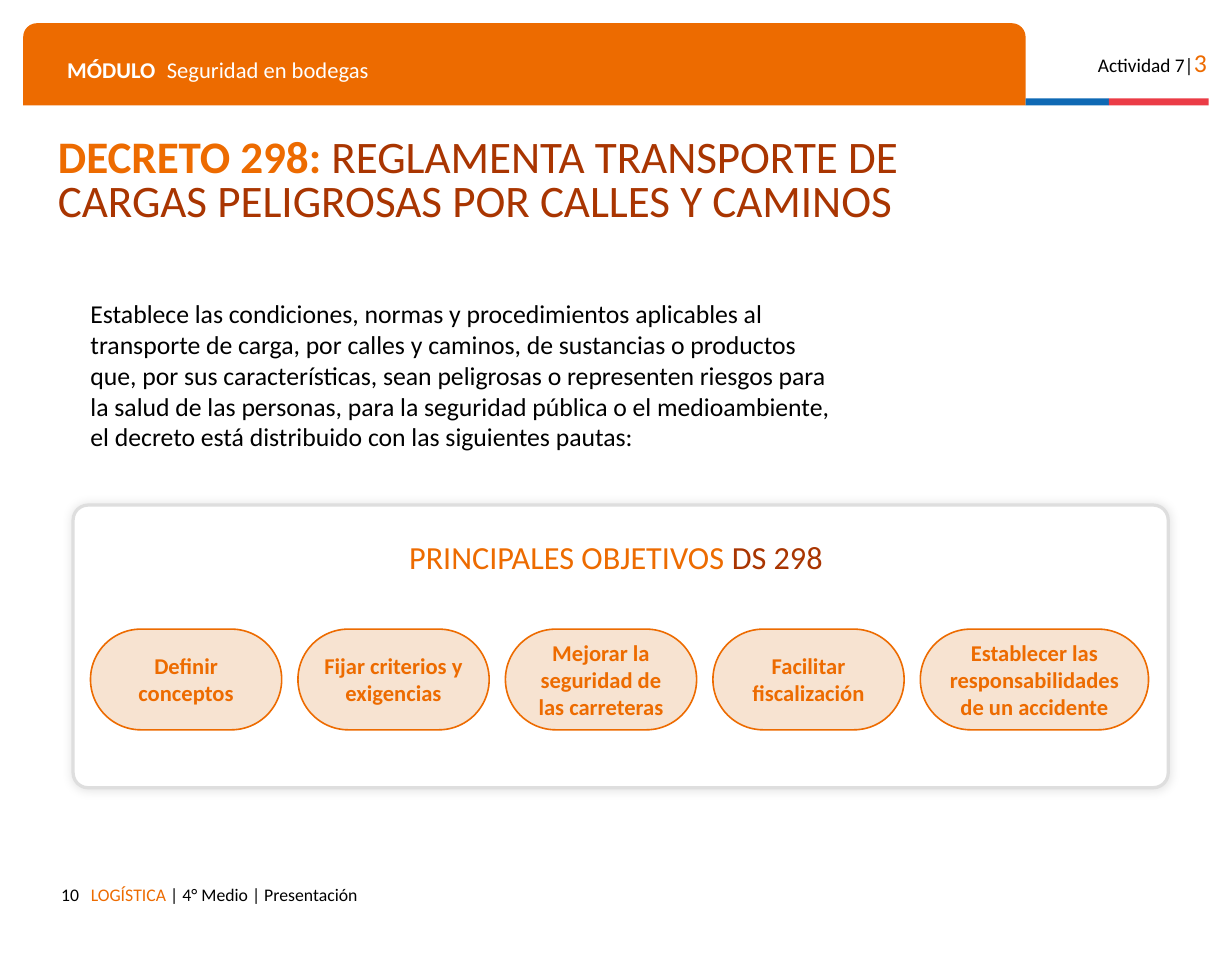
from pptx import Presentation
from pptx.dml.color import RGBColor
from pptx.enum import shapes, text
from pptx.oxml import parse_xml
from pptx.oxml.ns import nsdecls
from pptx.util import Pt

COLORS = {
    "orange": "ED6B00", "rust": "A93501", "blue": "0F69B4", "red": "EB3C46",
    "peach": "F7E3D1", "gray": "DEDEDE", "white": "FFFFFF", "black": "000000",
}
FONT = "Calibri"
SHAPE = shapes.MSO_SHAPE
LEFT, CENTER, RIGHT = text.PP_ALIGN.LEFT, text.PP_ALIGN.CENTER, text.PP_ALIGN.RIGHT
TOP, MIDDLE = text.MSO_ANCHOR.TOP, text.MSO_ANCHOR.MIDDLE
GOALS = [
    ("Definir conceptos", 118.8),
    ("Fijar criterios y exigencias", 118.8),
    ("Mejorar la seguridad de las carreteras", 118.8),
    ("Facilitar fiscalización", 118.8),
    ("Establecer las responsabilidades de un accidente", 141.8),
]


def color(name):
    return RGBColor.from_string(COLORS[name])


def write(box, spans, align=LEFT, anchor=TOP, inset=7.2, spacing=1.0, xml=()):
    """Fill a box with one paragraph of (words, size, color, bold) spans."""
    frame = box.text_frame
    frame.word_wrap = True
    frame.auto_size = text.MSO_AUTO_SIZE.NONE
    frame.vertical_anchor = anchor
    frame.margin_left = frame.margin_right = Pt(7.2)
    frame.margin_top = frame.margin_bottom = Pt(inset)
    para = frame.paragraphs[0]
    para.alignment = align
    para.line_spacing = spacing
    para.space_before = Pt(0)
    for element in xml:
        para._p.get_or_add_pPr().append(parse_xml(element))
    for words, size, ink, bold in spans:
        span = para.add_run()
        span.text = words
        span.font.name = FONT
        span.font.size = Pt(size)
        span.font.bold = bold
        span.font.color.rgb = color(ink)


def add_label(page, place, spans, **options):
    box = page.shapes.add_textbox(*map(Pt, place))
    write(box, spans, **options)


def fill_placeholder(box, place, spans, **options):
    box.left, box.top, box.width, box.height = map(Pt, place)
    write(box, spans, **options)


def add_block(page, kind, place, fill, line=None, line_width=1, corners=()):
    block = page.shapes.add_shape(kind, *map(Pt, place))
    block.shadow.inherit = False
    block.fill.solid()
    block.fill.fore_color.rgb = color(fill)
    if line:
        block.line.color.rgb = color(line)
        block.line.width = Pt(line_width)
    else:
        block.line.fill.background()
    for index, corner in enumerate(corners):
        block.adjustments[index] = corner
    return block


def add_soft_shadow(block, blur, opacity):
    effects = block._element.spPr.find(
        "{http://schemas.openxmlformats.org/drawingml/2006/main}effectLst")
    effects.append(parse_xml(
        f'<a:outerShdw {nsdecls("a")} blurRad="{Pt(blur)}" dist="0" dir="0" '
        f'algn="ctr" rotWithShape="0"><a:srgbClr val="{COLORS["black"]}">'
        f'<a:alpha val="{opacity * 1000}"/></a:srgbClr></a:outerShdw>'))


def add_header(page):
    add_block(page, SHAPE.ROUND_2_SAME_RECTANGLE, (14.4, 14.4, 622.8, 51.1),
              "orange", corners=(0.167, 0))
    add_block(page, SHAPE.RECTANGLE, (637.2, 61.2, 51.8, 4.3), "blue")
    add_block(page, SHAPE.RECTANGLE, (689, 61.2, 61.9, 4.3), "red")
    tab = f'<a:tabLst {nsdecls("a")}><a:tab pos="{Pt(62)}" algn="l"/></a:tabLst>'
    add_label(page, (34.6, 27.4, 586, 25.2),
              [("MÓDULO\t", 14, "white", True),
               ("Seguridad en bodegas", 14, "white", False)], xml=[tab])
    add_label(page, (664.6, 21.6, 92.2, 27.4),
              [("Actividad 7|", 12, "black", False), ("3", 16, "orange", False)],
              align=RIGHT)


def add_goals(page):
    panel = add_block(page, SHAPE.ROUNDED_RECTANGLE, (45.4, 313.9, 680.4, 175.7),
                      "white", "gray", 2, corners=(0.053,))
    add_soft_shadow(panel, blur=6, opacity=11)
    add_label(page, (226.8, 331.2, 311.8, 32.4),
              [("PRINCIPALES OBJETIVOS ", 20, "orange", False),
               ("DS 298", 20, "rust", False)],
              align=CENTER, anchor=MIDDLE, spacing=0.9)
    left, gap = 56.2, 10.1
    for goal, width in GOALS:
        pill = add_block(page, SHAPE.ROUNDED_RECTANGLE, (left, 391, width, 62.6),
                         "peach", "orange", corners=(0.5,))
        write(pill, [(goal, 14, "orange", True)], align=CENTER, anchor=MIDDLE, inset=3.6)
        left += width + gap


def add_footer(page):
    add_label(page, (14.4, 542.2, 41.8, 20.9), [("10", 11, "black", False)], align=RIGHT)
    add_label(page, (49.3, 542.2, 514, 27.4),
              [("LOGÍSTICA ", 11, "orange", False),
               ("| 4° Medio | Presentación", 11, "black", False)])


def main():
    deck = Presentation()
    deck.slide_width, deck.slide_height = Pt(765.4), Pt(595.4)
    page = deck.slides.add_slide(deck.slide_layouts[1])
    title, body = page.placeholders

    add_header(page)

    # Title and introduction
    fill_placeholder(title, (28.8, 100.8, 593.3, 25.2),
                     [("DECRETO 298: ", 28, "orange", True),
                      ("REGLAMENTA TRANSPORTE DE CARGAS PELIGROSAS POR CALLES Y CAMINOS",
                       28, "rust", False)],
                     anchor=MIDDLE, spacing=0.8)
    fill_placeholder(body, (49, 181.4, 482.4, 116.6),
                     [("Establece las condiciones, normas y procedimientos aplicables al "
                       "transporte de carga, por calles y caminos, de sustancias o productos "
                       "que, por sus características, sean peligrosas o representen riesgos "
                       "para la salud de las personas, para la seguridad pública o el "
                       "medioambiente, el decreto está distribuido con las siguientes pautas:",
                       16, "black", False)],
                     inset=3.6, xml=[f'<a:buNone {nsdecls("a")}/>'])
    properties = body.text_frame.paragraphs[0]._p.get_or_add_pPr()
    properties.set("marL", "0")
    properties.set("indent", "0")

    add_goals(page)
    add_footer(page)
    deck.save("out.pptx")


if __name__ == "__main__":
    main()
